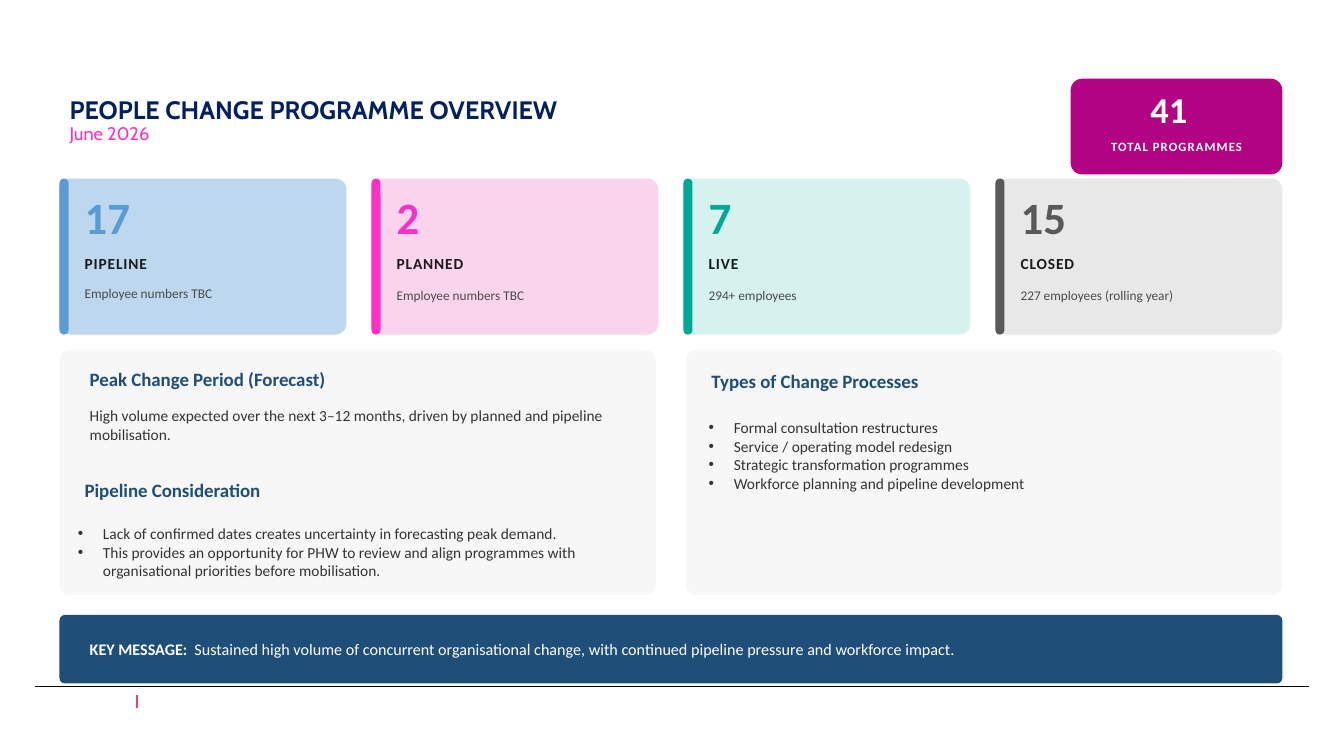
from lxml import etree
from pptx import Presentation
from pptx.dml.color import RGBColor
from pptx.enum import shapes, text
from pptx.oxml import ns
from pptx.util import Pt

LEFT, WIDE = 42.5, 873.5
NAVY, PINK, WHITE, INK = "1F4E79", "FC30C7", "FFFFFF", "333333"
TOP, MID = text.MSO_ANCHOR.TOP, text.MSO_ANCHOR.MIDDLE


def color(code):
    return RGBColor.from_string(code)


def style(font, size, code, bold=False, name="Calibri"):
    font.size, font.bold, font.name = Pt(size), bold, name
    font.color.rgb = color(code)


def panel(slide, x, y, w, h, fill, adj):
    box = slide.shapes.add_shape(
        shapes.MSO_SHAPE.ROUNDED_RECTANGLE, Pt(x), Pt(y), Pt(w), Pt(h))
    box.adjustments[0] = adj
    box.shadow.inherit = False
    box.fill.solid()
    box.fill.fore_color.rgb = color(fill)
    box.line.fill.background()


def frame(slide, x, y, w, h, anchor=TOP):
    body = slide.shapes.add_textbox(Pt(x), Pt(y), Pt(w), Pt(h)).text_frame
    body.word_wrap = True
    body.vertical_anchor = anchor
    body.margin_left = body.margin_right = 0
    body.margin_top = body.margin_bottom = 0
    return body


def label(slide, x, y, w, h, words, size, code, bold=False,
          center=False, track=0):
    body = frame(slide, x, y, w, h, MID if center else TOP)
    par = body.paragraphs[0]
    run = par.add_run()
    run.text = words
    if center:
        par.alignment = text.PP_ALIGN.CENTER
    style(par.font, size, code, bold)
    if track:
        run._r.get_or_add_rPr().set("spc", str(int(track * 100)))


def bullets(slide, x, y, w, h, items):
    body = frame(slide, x, y, w, h)
    for i, item in enumerate(items):
        par = body.add_paragraph() if i else body.paragraphs[0]
        par.text = item
        props = par._p.get_or_add_pPr()
        props.set("marL", str(Pt(18)))
        props.set("indent", str(-Pt(18)))
        etree.SubElement(props, ns.qn("a:buFont")).set("typeface", "Arial")
        etree.SubElement(props, ns.qn("a:buChar")).set("char", "•")
        style(par.font, 11, INK)


def rule(slide, x1, y1, x2, y2, code, width):
    line = slide.shapes.add_connector(
        shapes.MSO_CONNECTOR.STRAIGHT, Pt(x1), Pt(y1), Pt(x2), Pt(y2))
    line.line.color.rgb = color(code)
    line.line.width = Pt(width)
    etree.SubElement(line._element.spPr, ns.qn("a:effectLst"))


def heading(slide):
    title = slide.shapes.title
    title.left, title.top = Pt(LEFT), Pt(66.2)
    title.width, title.height = Pt(847.5), Pt(41.8)
    body = title.text_frame
    body.text = "PEOPLE CHANGE PROGRAMME OVERVIEW\nJune 2026"
    body.word_wrap = True
    body.auto_size = text.MSO_AUTO_SIZE.NONE
    body.vertical_anchor = TOP
    looks = [(18, "002060", True), (13, PINK, False)]
    for par, look in zip(body.paragraphs, looks):
        par.alignment = text.PP_ALIGN.LEFT
        par.line_spacing = 0.9
        par.space_before = Pt(0)
        style(par.font, *look, name="Cabin")


def card(slide, x, count, name, note, drop, fill, accent):
    panel(slide, x, 127.5, 205, 111.5, fill, 0.07)
    panel(slide, x, 127.5, 6.5, 111.5, accent, 0.5)
    x += 18
    label(slide, x, 135.5, 176.5, 43, count, 32, accent, True)
    label(slide, x, 181.5, 176.5, 25, name, 11, "1A1A1A", True, track=0.6)
    label(slide, x, drop, 176.5, 29, note, 9.5, "4A4A4A")


def message(slide):
    panel(slide, LEFT, 439.2, WIDE, 49, NAVY, 0.08)
    par = frame(slide, 64.1, 439.2, 830, 49, MID).paragraphs[0]
    tabs = etree.SubElement(par._p.get_or_add_pPr(), ns.qn("a:tabLst"))
    stop = etree.SubElement(tabs, ns.qn("a:tab"))
    stop.set("pos", str(Pt(74.8)))
    stop.set("algn", "l")
    parts = [("KEY MESSAGE:\t", True),
             ("Sustained high volume of concurrent organisational change, "
              "with continued pipeline pressure and workforce impact.", False)]
    for words, bold in parts:
        run = par.add_run()
        run.text = words
        style(run.font, 11.5, WHITE, bold)


def main():
    deck = Presentation()
    deck.slide_width, deck.slide_height = Pt(960), Pt(540)
    slide = deck.slides.add_slide(deck.slide_layouts[5])

    # Footer rules
    rule(slide, 25.2, 490.3, 935.3, 490.3, "000000", 0.41)
    rule(slide, 98, 505.4, 98, 496.1, "F43882", 1.65)

    # Title and total
    heading(slide)
    panel(slide, 764.8, 56.2, 151.2, 68.4, "B10383", 0.12)
    label(slide, 764.8, 59.8, 140.4, 36, "41", 26, WHITE, True, True)
    label(slide, 764.8, 92.2, 151.2, 25.2, "TOTAL PROGRAMMES", 9, WHITE,
          True, True, 0.8)

    # Status cards
    cards = [
        ("17", "PIPELINE", "Employee numbers TBC", 203.8, "BDD7EE", "5B9BD5"),
        ("2", "PLANNED", "Employee numbers TBC", 205.2, "FAD4EC", PINK),
        ("7", "LIVE", "294+ employees", 205.2, "D6F2EE", "00A896"),
        ("15", "CLOSED", "227 employees (rolling year)", 205.2,
         "E8E8E8", "595959"),
    ]
    step = (WIDE - 205) / (len(cards) - 1)
    for i, data in enumerate(cards):
        card(slide, LEFT + i * step, *data)

    # Detail panels
    for x in (LEFT, LEFT + WIDE - 426):
        panel(slide, x, 250, 426, 175, "F7F7F7", 0.04)
    heads = [(64.1, 262.8, "Peak Change Period (Forecast)"),
             (60.5, 342, "Pipeline Consideration"),
             (508.2, 264.2, "Types of Change Processes")]
    for x, y, words in heads:
        label(slide, x, y, 390, 25, words, 13.5, NAVY, True)
    label(slide, 64.1, 290.2, 390, 39.6,
          "High volume expected over the next 3–12 months, driven by "
          "planned and pipeline mobilisation.", 11, INK)
    bullets(slide, 55.6, 374.4, 390, 43, [
        "Lack of confirmed dates creates uncertainty in forecasting "
        "peak demand.",
        "This provides an opportunity for PHW to review and align programmes "
        "with organisational priorities before mobilisation."])
    bullets(slide, 506.2, 298.8, 390, 72, [
        "Formal consultation restructures",
        "Service / operating model redesign",
        "Strategic transformation programmes",
        "Workforce planning and pipeline development"])

    # Key message
    message(slide)
    deck.save("out.pptx")


if __name__ == "__main__":
    main()
